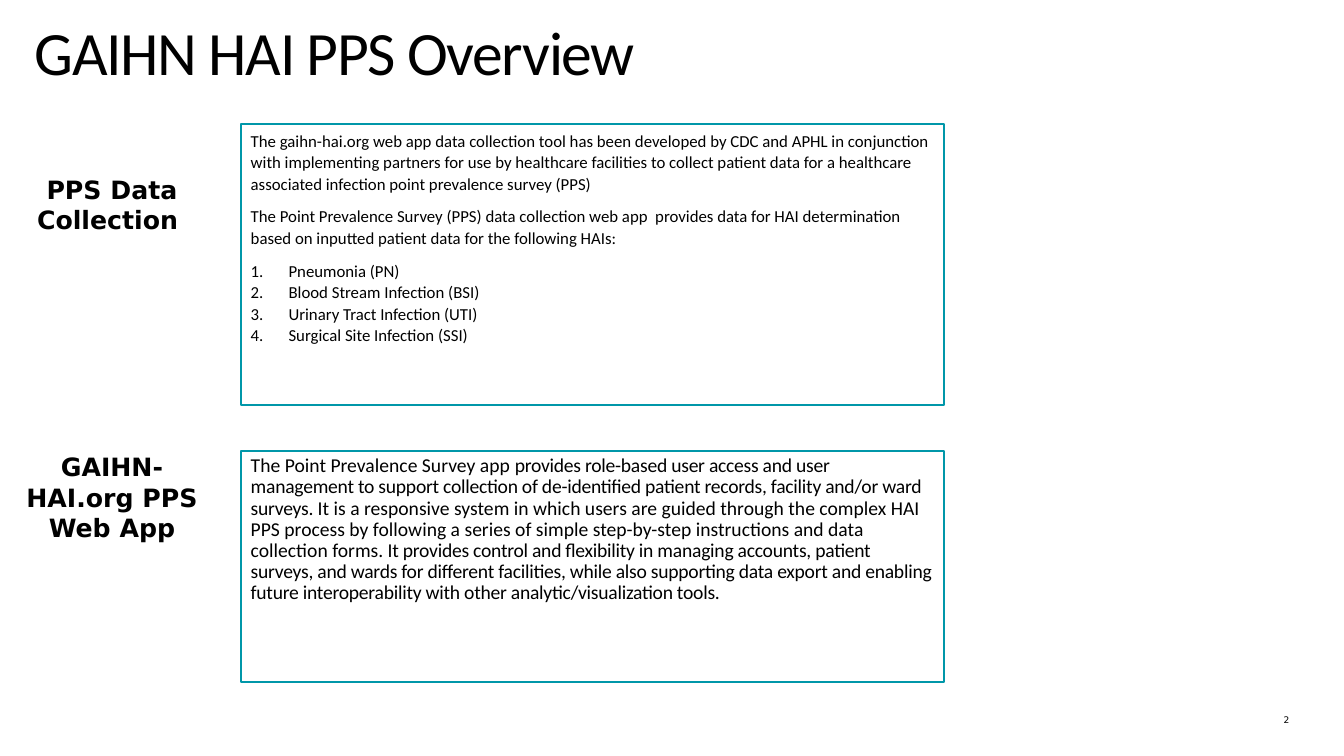
"""Build the GAIHN HAI PPS overview slide."""
from lxml import etree
from pptx import Presentation
from pptx import util as u
from pptx.dml import color
from pptx.enum import shapes, text
from pptx.oxml import ns


def rgb(value):
    return color.RGBColor.from_string(value)


class Page:
    """Holds the style and the current slide."""

    ink, accent = "000000", "0097A9"
    body_font, label_font = "Calibri", "DejaVu Sans"
    panel_left, panel_width, label_width = 172, 502.5, 160

    def __init__(self, deck):
        self.page = deck.slides.add_slide(deck.slide_layouts[6])

    def apply(self, target, formats):
        for name, value in formats.items():
            setattr(target, name, value)

    def add_spans(self, para, spans, size, font, bold=False):
        for content, spacing in spans:
            span = para.add_run()
            span.text = content
            self.apply(span.font, {"size": u.Pt(size), "name": font, "bold": bold})
            span.font.color.rgb = rgb(self.ink)
            if spacing:
                span.font._element.set("spc", str(round(spacing * 100)))

    def number(self, para, points):
        props = para._p.get_or_add_pPr()
        indent = u.Pt(points)
        props.set("marL", str(indent))
        props.set("indent", str(-indent))
        etree.SubElement(props, ns.qn("a:buFont"), typeface="+mj-lt")
        etree.SubElement(props, ns.qn("a:buAutoNum"), type="arabicPeriod")

    def text_box(self, place, content, size, font, align="LEFT", bold=False,
                 spacing=0, inset=True):
        box = self.page.shapes.add_textbox(*map(u.Pt, place))
        frame = box.text_frame
        self.apply(frame, {"word_wrap": True,
                           "vertical_anchor": text.MSO_ANCHOR.TOP})
        if not inset:
            sides = ("left", "top", "right", "bottom")
            self.apply(frame, {f"margin_{side}": 0 for side in sides})
        para = frame.paragraphs[0]
        para.alignment = text.PP_ALIGN[align]
        self.add_spans(para, [(content, spacing)], size, font, bold)

    def label(self, top, height, content):
        self.text_box((0, top, self.label_width, height), content, 18,
                      self.label_font, "CENTER", bold=True)

    def panel(self, top, height, paragraphs, size, line_spacing):
        place = (self.panel_left, top, self.panel_width, height)
        box = self.page.shapes.add_shape(shapes.MSO_SHAPE.RECTANGLE,
                                         *map(u.Pt, place))
        box.shadow.inherit = False
        box.fill.background()
        box.line.color.rgb = rgb(self.accent)
        box.line.width = u.Pt(1.5)
        frame = box.text_frame
        self.apply(frame, {"word_wrap": True,
                           "vertical_anchor": text.MSO_ANCHOR.TOP})
        for index, (spans, after, numbered) in enumerate(paragraphs):
            para = frame.add_paragraph() if index else frame.paragraphs[0]
            if numbered:
                self.number(para, 27)
            self.apply(para, {"alignment": text.PP_ALIGN.LEFT,
                              "line_spacing": line_spacing,
                              "space_after": u.Pt(after)})
            self.add_spans(para, spans, size, self.body_font)


COLLECTION = [
    "The gaihn-hai.org web app data collection tool has been developed by CDC "
    "and APHL in conjunction with implementing partners for use by healthcare "
    "facilities to collect patient data for a healthcare associated infection "
    "point prevalence survey (PPS)",
    "The Point Prevalence Survey (PPS) data collection web app  provides data "
    "for HAI determination based on inputted patient data for the following HAIs:",
]
INFECTIONS = ["Pneumonia (PN)", "Blood Stream Infection (BSI)",
              "Urinary Tract Infection (UTI)", "Surgical Site Infection (SSI)"]
WEB_APP = [
    ("The Point Prevalence Survey app ", 0),
    ("provides role-based user access and user management to support collection "
     "of de-identified patient records, facility and/or ward surveys. ", -0.2),
    ("It is a responsive system in which users are guided through the complex "
     "HAI PPS process by following a series of simple step-by-step instructions "
     "and data collection forms.", 0),
    (" It provides control and flexibility in managing accounts, patient surveys, "
     "and wards for different facilities, while also supporting data export and "
     "enabling future interoperability with other analytic/visualization tools.",
     -0.2),
]


def main():
    deck = Presentation()
    deck.slide_width, deck.slide_height = u.Pt(960), u.Pt(540)
    page = Page(deck)
    page.text_box((896.5, 510, 24.5, 8), "2", 6.5, page.label_font, "RIGHT",
                  inset=False)
    page.text_box((25, 10, 828, 104.5), "GAIHN HAI PPS Overview", 44,
                  page.body_font, spacing=-1, inset=False)
    page.label(121, 51, "PPS Data Collection ")
    collection = [([(line, 0)], 8, False) for line in COLLECTION]
    infections = [([(line, 0)], 0, True) for line in INFECTIONS]
    page.panel(88.5, 201, collection + infections, 12, 1.07)
    page.label(319, 73, "GAIHN-HAI.org PPS Web App")
    page.panel(322, 165, [(WEB_APP, 0, False)], 14, 0.9)
    deck.save("out.pptx")


if __name__ == "__main__":
    main()
